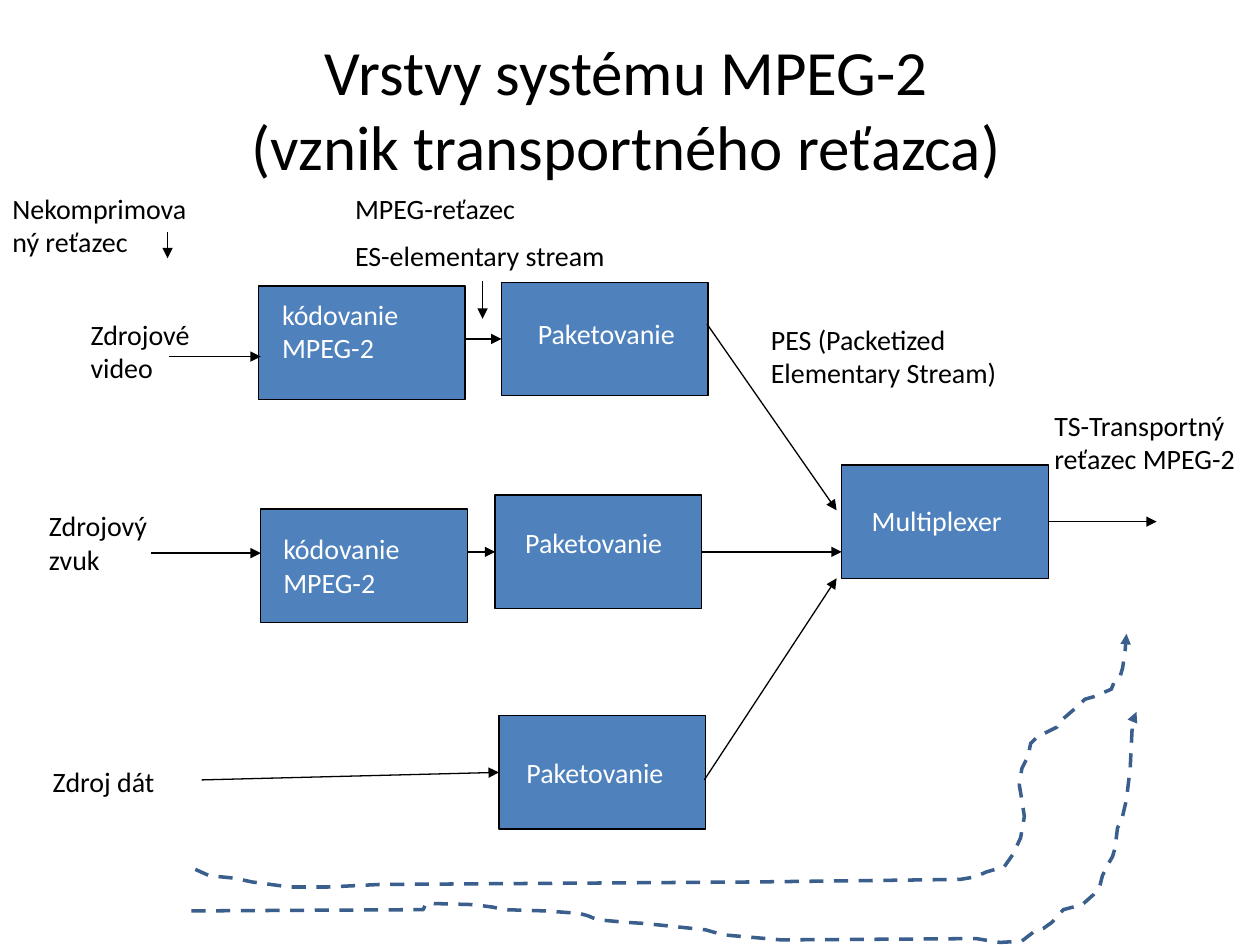
from lxml import etree
from pptx import Presentation
from pptx.dml.color import RGBColor
from pptx.enum.dml import MSO_LINE
from pptx.enum.shapes import MSO_CONNECTOR, MSO_SHAPE
from pptx.enum.text import MSO_ANCHOR, PP_ALIGN
from pptx.oxml.ns import qn
from pptx.util import Inches, Pt

RECTANGLE = MSO_SHAPE.RECTANGLE
STRAIGHT = MSO_CONNECTOR.STRAIGHT
DASH = MSO_LINE.DASH
MIDDLE = MSO_ANCHOR.MIDDLE
CENTER = PP_ALIGN.CENTER
LEFT_SIDE, RIGHT_SIDE = 1, 3

FONT = "Calibri"
BLACK, WHITE, BLUE, FLOW_BLUE = "000000", "FFFFFF", "4F81BD", "3A5F8C"
STAGE_W, STAGE_H = 1.64, 0.9
STAGE_LABEL_W = 1.32
LINE_H, TWO_LINES_H = 0.37, 0.64

VIDEO_FLOW = [
    (1.55, 6.9), (1.66, 6.95), (1.86, 6.97), (2, 7), (2.3, 7.04), (2.6, 7.04),
    (3.01, 7.02), (5.99, 7), (7.62, 6.98), (7.74, 6.96), (7.83, 6.92),
    (7.97, 6.88), (8.04, 6.78), (8.1, 6.65), (8.13, 6.48), (8.11, 6.35),
    (8.09, 6.23), (8.11, 6.1), (8.16, 6), (8.18, 5.9), (8.23, 5.85),
    (8.39, 5.77), (8.42, 5.72), (8.56, 5.6), (8.61, 5.55), (8.68, 5.53),
    (8.82, 5.47), (8.84, 5.42), (8.89, 5.37), (8.91, 5.3), (8.93, 5.16),
    (8.94, 5.03),
]
AUDIO_FLOW = [
    (1.52, 7.23), (3.36, 7.22), (3.38, 7.17), (3.76, 7.18), (3.91, 7.2),
    (4, 7.22), (4.33, 7.23), (4.6, 7.25), (4.67, 7.27), (4.74, 7.3),
    (4.96, 7.32), (5.12, 7.33), (5.31, 7.35), (5.6, 7.38), (5.74, 7.42),
    (6.2, 7.46), (7.75, 7.45), (7.87, 7.47), (7.94, 7.48), (8.11, 7.47),
    (8.2, 7.4), (8.28, 7.37), (8.35, 7.32), (8.44, 7.22), (8.59, 7.18),
    (8.68, 7.1), (8.73, 7.03), (8.75, 6.95), (8.8, 6.85), (8.83, 6.8),
    (8.85, 6.73), (8.87, 6.57), (8.9, 6.52), (8.94, 6.35), (8.97, 6.1),
    (8.99, 5.7), (9.02, 5.65),
]


def rgb(color):
    return RGBColor.from_string(color)


def style_line(line, color, width):
    """Colour a line and end it with a triangle."""
    line.color.rgb = rgb(color)
    line.width = Pt(width)
    etree.SubElement(line._get_or_add_ln(), qn("a:tailEnd"), type="triangle")


def add_label(slide, left, top, width, height, lines, color=BLACK):
    label = slide.shapes.add_textbox(
        Inches(left), Inches(top), Inches(width), Inches(height))
    frame = label.text_frame
    frame.word_wrap = True
    frame.text = lines
    for index, paragraph in enumerate(frame.paragraphs):
        if index:
            paragraph.space_before = Pt(8)
        font = paragraph.runs[0].font
        font.name, font.size, font.color.rgb = FONT, Pt(16), rgb(color)


def add_stage(slide, left, top, name, name_dx, name_dy, name_height=LINE_H):
    """Draw a processing block with its name offset from the block's corner."""
    block = slide.shapes.add_shape(
        RECTANGLE, Inches(left), Inches(top), Inches(STAGE_W), Inches(STAGE_H))
    block.shadow.inherit = False
    block.fill.solid()
    block.fill.fore_color.rgb = rgb(BLUE)
    block.line.color.rgb = rgb(BLACK)
    block.line.width = Pt(0.75)
    add_label(slide, left + name_dx, top + name_dy, STAGE_LABEL_W, name_height,
              name, WHITE)
    return block


def add_arrow(slide, start, end, source=None, target=None):
    """Draw an arrow, joined to source's right or target's left if given."""
    arrow = slide.shapes.add_connector(
        STRAIGHT, *(Inches(value) for value in (*start, *end)))
    if source is not None:
        arrow.begin_connect(source, RIGHT_SIDE)
    if target is not None:
        arrow.end_connect(target, LEFT_SIDE)
    style_line(arrow.line, BLACK, 0.75)
    etree.SubElement(arrow._element.spPr, qn("a:effectLst"))


def add_flow(slide, points):
    """Draw a dashed flow line through the points."""
    start, *rest = [(Inches(x), Inches(y)) for x, y in points]
    builder = slide.shapes.build_freeform(*start)
    builder.add_line_segments(rest, close=False)
    flow = builder.convert_to_shape()
    flow.shadow.inherit = False
    flow.fill.background()
    flow.line.dash_style = DASH
    style_line(flow.line, FLOW_BLUE, 2)


def add_title(slide, left, top, width, height):
    title = slide.shapes.title
    title.left, title.top = Inches(left), Inches(top)
    title.width, title.height = Inches(width), Inches(height)
    title.text_frame.vertical_anchor = MIDDLE
    paragraph = title.text_frame.paragraphs[0]
    paragraph.text = "Vrstvy systému MPEG-2\v(vznik transportného reťazca)"
    paragraph.alignment = CENTER
    for run in paragraph.runs:
        run.font.name, run.font.size = FONT, Pt(36)
        run.font.color.rgb = rgb(BLACK)


def add_stream_notes(slide, left, top):
    add_label(slide, left, top, 1.65, TWO_LINES_H, "Nekomprimovaný reťazec")
    add_arrow(slide, (left + 1.33, top + 0.37), (left + 1.33, top + 0.58))
    add_label(slide, left + 2.72, top, 2.62, 0.77,
              "MPEG-reťazec\nES-elementary stream")
    add_arrow(slide, (left + 3.83, top + 0.76), (left + 3.83, top + 1.06))


def add_video_row(slide, left, top):
    add_label(slide, left, top + 0.23, 1.32, TWO_LINES_H, "Zdrojové video")
    add_stage(slide, left + 1.43, top + 0.03, "kódovanie MPEG-2",
              0.09, 0.04, TWO_LINES_H)
    packetizer = add_stage(slide, left + 3.36, top, "Paketovanie", 0.19, 0.22)
    add_arrow(slide, (left + 0.72, top + 0.59), (left + 1.45, top + 0.59))
    add_arrow(slide, (left + 3.07, top + 0.45), (left + 3.36, top + 0.45),
              target=packetizer)


def add_audio_row(slide, left, top):
    """Draw the audio row and return its packetizer."""
    add_label(slide, left, top + 0.06, 1.32, TWO_LINES_H, "Zdrojový zvuk")
    add_stage(slide, left + 1.78, top + 0.11, "kódovanie MPEG-2",
              0.08, 0.13, TWO_LINES_H)
    packetizer = add_stage(slide, left + 3.64, top, "Paketovanie", 0.14, 0.19)
    add_arrow(slide, (left + 0.91, top + 0.46), (left + 1.78, top + 0.46))
    add_arrow(slide, (left + 3.42, top + 0.45), (left + 3.64, top + 0.45),
              target=packetizer)
    return packetizer


def add_data_row(slide, left, top):
    add_label(slide, left, top + 0.34, 1.65, LINE_H, "Zdroj dát")
    packetizer = add_stage(slide, left + 3.64, top, "Paketovanie", 0.12, 0.27)
    add_arrow(slide, (left + 1.28, top + 0.51), (left + 3.64, top + 0.45),
              target=packetizer)


def add_multiplexer(slide, left, top, audio_packetizer):
    """Draw the multiplexer with its three inputs and its output."""
    multiplexer = add_stage(slide, left, top, "Multiplexer", 0.14, 0.26)
    add_arrow(slide, (left - 1.07, top - 1.12), (left - 0.04, top + 0.36))
    add_arrow(slide, (left - 1.11, top + 0.69), (left, top + 0.69),
              source=audio_packetizer)
    add_arrow(slide, (left - 1.09, top + 2.5), (left - 0.04, top + 0.9))
    add_arrow(slide, (left + STAGE_W, top + 0.45), (left + 2.5, top + 0.45),
              source=multiplexer)
    add_label(slide, left - 0.66, top - 1.18, 2.21, TWO_LINES_H,
              "PES (Packetized Elementary Stream)")
    add_label(slide, left + 1.59, top - 0.5, 1.73, TWO_LINES_H,
              "TS-Transportný reťazec MPEG-2")


def main():
    presentation = Presentation()
    presentation.slide_width, presentation.slide_height = Inches(10), Inches(7.5)
    slide = presentation.slides.add_slide(presentation.slide_layouts[5])
    add_title(slide, 0.72, 0.23, 8.5, 1.25)
    add_stream_notes(slide, 0, 1.47)
    add_video_row(slide, 0.62, 2.24)
    audio_packetizer = add_audio_row(slide, 0.29, 3.93)
    add_data_row(slide, 0.32, 5.68)
    add_multiplexer(slide, 6.68, 3.69, audio_packetizer)
    for points in (VIDEO_FLOW, AUDIO_FLOW):
        add_flow(slide, points)
    presentation.save("out.pptx")


if __name__ == "__main__":
    main()
